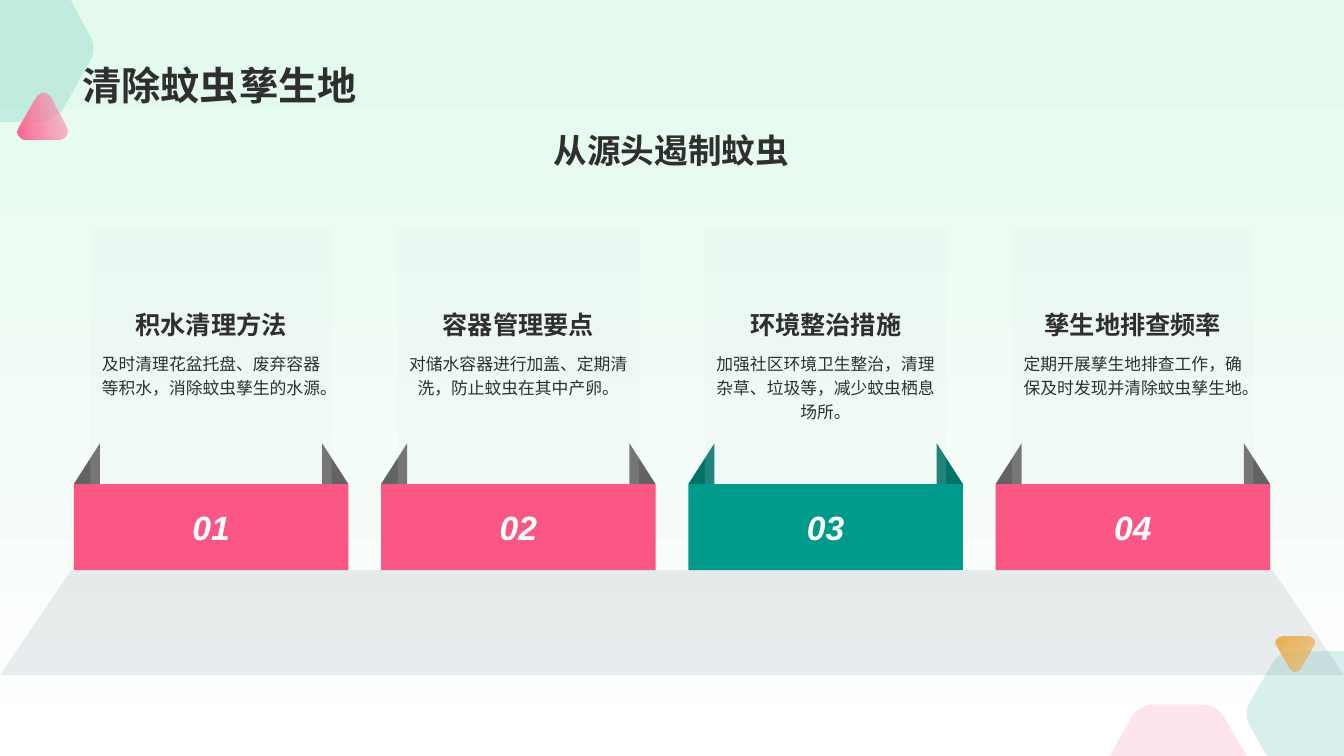
import math

import lxml.etree
import pptx
import pptx.util
import pptx.dml.color
import pptx.enum.shapes
import pptx.enum.text
import pptx.oxml.ns
from pptx.util import Cm

RGB = pptx.dml.color.RGBColor
SHAPE = pptx.enum.shapes.MSO_SHAPE
ALIGN = pptx.enum.text.PP_ALIGN
ANCHOR = pptx.enum.text.MSO_ANCHOR
qn = pptx.oxml.ns.qn

MINT, WHITE, INK = RGB(0xE3, 0xFA, 0xED), RGB(0xFF, 0xFF, 0xFF), RGB(0x2F, 0x2F, 0x2F)
PINK, PALE_PINK = RGB(0xFA, 0x57, 0x85), RGB(0xFC, 0x9A, 0xB6)
TEAL, DARK_TEAL = RGB(0x00, 0x9A, 0x8C), RGB(0x00, 0x73, 0x69)
GREY, MIST, SLATE = RGB(0x63, 0x63, 0x63), RGB(0xE4, 0xE6, 0xEA), RGB(0x77, 0x84, 0x95)
AMBER = RGB(0xFF, 0xB6, 0x44)

FONT = "Arial"
TITLE = {"size": pptx.util.Pt(28), "bold": True}
SUBTITLE = {"size": pptx.util.Pt(24), "bold": True}
HEADING = {"size": pptx.util.Pt(18), "bold": True}
BODY = {"size": pptx.util.Pt(12)}
NUMBER = {"size": pptx.util.Pt(24), "bold": True, "italic": True}

CARDS = [
    ("积水清理方法", "及时清理花盆托盘、废弃容器等积水，消除蚊虫孳生的水源。", PINK, GREY),
    ("容器管理要点", "对储水容器进行加盖、定期清洗，防止蚊虫在其中产卵。", PINK, GREY),
    ("环境整治措施", "加强社区环境卫生整治，清理杂草、垃圾等，减少蚊虫栖息场所。", TEAL, DARK_TEAL),
    ("孳生地排查频率", "定期开展孳生地排查工作，确保及时发现并清除蚊虫孳生地。", PINK, GREY),
]

# Outlines in cm: two numbers make a line, six make a Bézier curve
TOP_HEXAGON = [(0, 0), (1.78, 0), (2.26, 0.89), (2.39, 1.09, 2.39, 1.35, 2.26, 1.55),
               (1.6, 2.74), (1.47, 2.95, 1.24, 3.07, 1.02, 3.07), (0, 3.07)]
BOTTOM_HEXAGON = [(32.59, 16.41), (33.76, 16.41), (33.78, 16.41, 33.81, 16.41, 33.83, 16.41),
                  (33.87, 16.41), (33.87, 19.05), (31.93, 19.05), (31.5, 18.29),
                  (31.39, 18.11, 31.39, 17.88, 31.5, 17.7), (32.08, 16.69),
                  (32.18, 16.51, 32.39, 16.41, 32.59, 16.41)]
AMBER_TRIANGLE = [(32.77, 16.84), (33.1, 16.28), (33.17, 16.18, 33.1, 16.05, 32.97, 16.05),
                  (32.31, 16.05), (32.18, 16.05, 32.11, 16.18, 32.18, 16.28),
                  (32.51, 16.84), (32.56, 16.94, 32.72, 16.94, 32.77, 16.84)]
PINK_HEXAGON = [(29.06, 17.75), (30.3, 17.75), (30.53, 17.75, 30.73, 17.88, 30.84, 18.06),
                (31.42, 19.05), (27.97, 19.05), (28.52, 18.06),
                (28.65, 17.88, 28.85, 17.75, 29.06, 17.75)]
PINK_TRIANGLE = [(1.68, 3.2), (1.27, 2.44), (1.19, 2.29, 0.99, 2.29, 0.91, 2.44),
                 (0.46, 3.2), (0.38, 3.35, 0.48, 3.51, 0.64, 3.51),
                 (1.5, 3.51), (1.65, 3.48, 1.75, 3.33, 1.68, 3.2)]


def fill_gradient(fill, colors, angle):
    """Two-colour gradient; the angle runs clockwise."""
    fill.gradient()
    fill.gradient_angle = 360 - angle
    for stop, color in zip(fill.gradient_stops, colors):
        stop.color.rgb = color


def paint(sp, colors, opacities):
    """Fill a shape with one colour or a gradient, without outline or shadow."""
    sp.shadow.inherit = False
    sp.line.fill.background()
    if len(colors) == 1:
        sp.fill.solid()
        sp.fill.fore_color.rgb = colors[0]
    else:
        fill_gradient(sp.fill, colors, 135)
    for tag, opacity in zip(sp.element.spPr.findall(".//" + qn("a:srgbClr")), opacities):
        if opacity < 100:
            lxml.etree.SubElement(tag, qn("a:alpha"), val=str(opacity * 1000))


def add_preset(s, kind, box, color, opacity=100):
    sp = s.shapes.add_shape(kind, *(Cm(v) for v in box))
    paint(sp, [color], [opacity])
    return sp


def add_outline(s, box, steps, colors, opacities, rotation=0):
    left, top, width, height = box
    cx, cy = left + width / 2, top + height / 2
    cos, sin = math.cos(math.radians(rotation)), math.sin(math.radians(rotation))

    def to_local(x, y):
        """Undo the rotation and measure from the corner of the box."""
        dx, dy = x - cx, y - cy
        return Cm(dx * cos + dy * sin + width / 2), Cm(dy * cos - dx * sin + height / 2)

    ends = [to_local(*step[-2:]) for step in steps]
    builder = s.shapes.build_freeform(*ends[0])
    builder.add_line_segments(ends[1:])
    sp = builder.convert_to_shape()
    sp.left, sp.top, sp.width, sp.height = (Cm(v) for v in box)
    sp.rotation = rotation
    # Rewrite the segments, with curves, in the coordinates of the box
    path = sp.element.spPr.find(".//" + qn("a:path"))
    for child in list(path):
        path.remove(child)
    path.set("w", str(Cm(width)))
    path.set("h", str(Cm(height)))
    for i, step in enumerate(steps):
        tag = "a:moveTo" if i == 0 else "a:lnTo" if len(step) == 2 else "a:cubicBezTo"
        segment = lxml.etree.SubElement(path, qn(tag))
        for x, y in zip(step[::2], step[1::2]):
            px, py = to_local(x, y)
            lxml.etree.SubElement(segment, qn("a:pt"), x=str(px), y=str(py))
    lxml.etree.SubElement(path, qn("a:close"))
    paint(sp, colors, opacities)


def write(sp, text, style, color=INK, align=ALIGN.CENTER, anchor=ANCHOR.TOP, spacing=None):
    tf = sp.text_frame
    tf.word_wrap = True
    tf.vertical_anchor = anchor
    p = tf.paragraphs[0]
    p.alignment = align
    p.line_spacing = spacing
    r = p.add_run()
    r.text = text
    for name, value in {"name": FONT, **style}.items():
        setattr(r.font, name, value)
    r.font.color.rgb = color
    lxml.etree.SubElement(r._r.get_or_add_rPr(), qn("a:ea"), typeface=FONT)


def add_text(s, box, text, style, **options):
    write(s.shapes.add_textbox(*(Cm(v) for v in box)), text, style, **options)


def add_decoration(s):
    add_outline(s, (0, 0, 2.36, 3.07), TOP_HEXAGON, [TEAL], [15])
    add_outline(s, (31.42, 16.41, 2.45, 2.64), BOTTOM_HEXAGON, [TEAL], [15])
    add_outline(s, (32.21, 16, 0.86, 0.97), AMBER_TRIANGLE, [AMBER, AMBER], [50, 100], 90)
    add_outline(s, (27.97, 17.75, 3.45, 1.3), PINK_HEXAGON, [PINK], [15])
    add_outline(s, (0.61, 2.46, 1.14, 1.3), PINK_TRIANGLE, [PALE_PINK, PINK], [50, 96], 30)


def add_card(s, box, number, heading, body, color, fold_color):
    left, top, width, height = box
    inset, bar_height, fold_width, fold_height = 0.42, 2.17, 0.66, 1.03
    bar_top = top + height - bar_height
    # Ribbon folds
    for x, flipped in ((left, True), (left + width - fold_width, False)):
        fold = add_preset(s, SHAPE.RIGHT_TRIANGLE,
                          (x, bar_top - fold_height, fold_width, fold_height), fold_color)
        if flipped:
            fold.element.spPr.xfrm.set("flipH", "1")
    # Panel and numbered bar
    inner_left, inner_width = left + inset, width - 2 * inset
    add_preset(s, SHAPE.RECTANGLE, (inner_left, top, inner_width, height), MIST, 15)
    bar = add_preset(s, SHAPE.RECTANGLE, (left, bar_top, width, bar_height), color)
    write(bar, f"{number:02d}", NUMBER, color=WHITE, anchor=ANCHOR.MIDDLE)
    # Body and heading
    add_text(s, (inner_left, top + 2.9, inner_width, 2.97), body, BODY, spacing=1.2)
    add_text(s, (inner_left, top + 1.04, inner_width, 1.86), heading, HEADING, anchor=ANCHOR.BOTTOM)


def add_cards(s, box):
    left, top, width, height = box
    card_width = 6.92
    pitch = (width - card_width) / (len(CARDS) - 1)
    for i, card in enumerate(CARDS):
        add_card(s, (left + i * pitch, top, card_width, height), i + 1, *card)


def main():
    prs = pptx.Presentation()
    prs.slide_width, prs.slide_height = Cm(33.87), Cm(19.05)
    s = prs.slides.add_slide(prs.slide_layouts[6])
    fill_gradient(s.background.fill, [MINT, WHITE], 90)
    add_decoration(s)
    # Titles
    add_text(s, (1.83, 0.36, 30.18, 2.49), "清除蚊虫孳生地", TITLE, align=ALIGN.LEFT, anchor=ANCHOR.BOTTOM)
    add_text(s, (1.83, 3.15, 30.18, 1.98), "从源头遏制蚊虫", SUBTITLE)
    # Floor and cards
    floor = add_preset(s, SHAPE.TRAPEZOID, (0, 14.37, 33.87, 2.64), SLATE, 15)
    floor.adjustments[0] = 0.68
    add_cards(s, (1.86, 5.79, 30.15, 8.58))
    prs.save("out.pptx")


if __name__ == "__main__":
    main()
